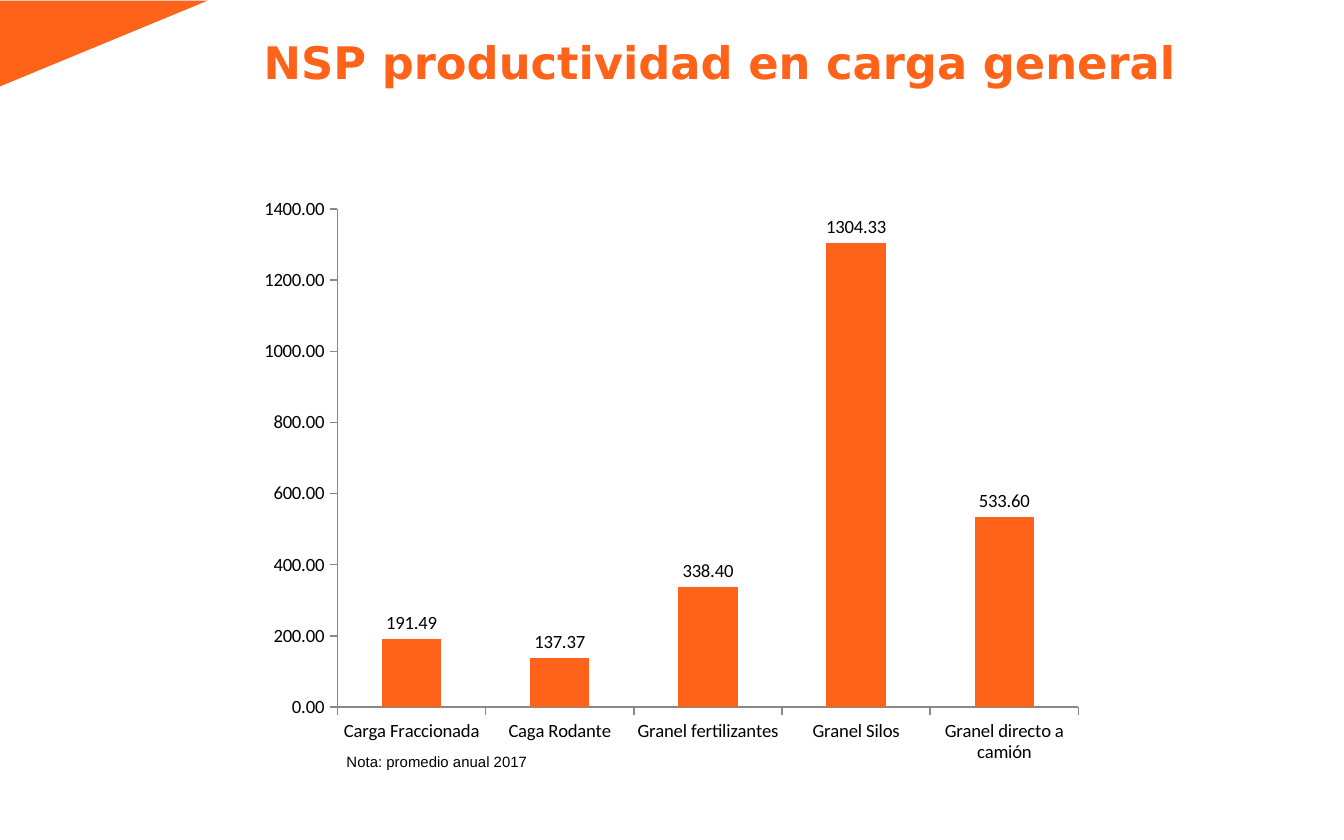
from pptx import Presentation
from pptx.chart.data import CategoryChartData
from pptx.dml.color import RGBColor
from pptx.enum.chart import XL_CHART_TYPE as CT, XL_LABEL_POSITION as LP, XL_TICK_MARK as TM
from pptx.enum.shapes import MSO_SHAPE as MS
from pptx.enum.text import MSO_ANCHOR as MA, PP_ALIGN as AL
from pptx.util import Inches, Pt

TITLE = "NSP productividad en carga general"
NOTE = "Nota: promedio anual 2017"
PRODUCTIVITY = [
    ("Carga Fraccionada", 191.49),
    ("Caga Rodante", 137.37),
    ("Granel fertilizantes", 338.4),
    ("Granel Silos", 1304.33),
    ("Granel directo a camión", 533.6),
]
ORANGE, BLACK, GREY = "FF6319", "000000", "888888"


def color(fmt, value):
    fmt.rgb = RGBColor.from_string(value)


def fill(fmt, value):
    fmt.solid()
    color(fmt.fore_color, value)


def style(font, size, name, value, bold=False):
    font.size, font.name, font.bold = Pt(size), name, bold
    color(font.color, value)


def place(sp, left, top, width, height):
    sp.left, sp.top = Inches(left), Inches(top)
    sp.width, sp.height = Inches(width), Inches(height)


def write(sp, text, size, name, value, bold=False, align=AL.LEFT, anchor=MA.TOP):
    tf = sp.text_frame
    tf.word_wrap = True
    tf.vertical_anchor = anchor
    p = tf.paragraphs[0]
    p.alignment = align
    r = p.add_run()
    r.text = text
    style(r.font, size, name, value, bold)


def add_chart(s):
    data = CategoryChartData(number_format="0.00")
    data.categories = [name for name, _ in PRODUCTIVITY]
    data.add_series("Series 1", [value for _, value in PRODUCTIVITY])
    box = [Inches(v) for v in (1.84, 1.39, 6.31, 4.37)]
    chart = s.shapes.add_chart(CT.COLUMN_CLUSTERED, *box, data).chart
    chart.has_legend = chart.has_title = False
    style(chart.font, 10, "Calibri", BLACK)

    for axis in (chart.category_axis, chart.value_axis):
        axis.has_major_gridlines = False
        axis.major_tick_mark, axis.minor_tick_mark = TM.OUTSIDE, TM.NONE
        fill(axis.format.line.fill, GREY)
        axis.format.line.width = Pt(0.75)
        style(axis.tick_labels.font, 10, "Calibri", BLACK)
    axis = chart.value_axis
    axis.minimum_scale, axis.maximum_scale, axis.major_unit = 0, 1400, 200
    axis.tick_labels.number_format = "0.00"
    axis.tick_labels.number_format_is_linked = False

    plot = chart.plots[0]
    plot.gap_width = 150
    plot.vary_by_categories = False
    fill(plot.series[0].format.fill, ORANGE)
    plot.has_data_labels = True
    labels = plot.data_labels
    labels.show_value = True
    labels.position = LP.OUTSIDE_END
    labels.number_format = "0.00"
    labels.number_format_is_linked = False
    style(labels.font, 10, "Calibri", BLACK)


def main():
    prs = Presentation()
    prs.slide_width, prs.slide_height = Inches(10), Inches(6.25)
    s = prs.slides.add_slide(prs.slide_layouts[5])

    corner = s.shapes.add_shape(MS.RIGHT_TRIANGLE, 0, 0, 0, 0)
    place(corner, 0.45, -0.45, 0.64, 1.55)
    corner.rotation = 90
    corner.shadow.inherit = False
    fill(corner.fill, ORANGE)
    corner.line.fill.background()

    title = s.shapes.title
    place(title, 1.3, 0.21, 8.11, 0.5)
    write(title, TITLE, 24, "DejaVu Sans", ORANGE, bold=True, align=AL.CENTER, anchor=MA.MIDDLE)

    add_chart(s)

    note = s.shapes.add_textbox(0, 0, 0, 0)
    place(note, 2.48, 5.55, 1.73, 0.24)
    write(note, NOTE, 8, "Arial", BLACK)

    prs.save("out.pptx")


if __name__ == "__main__":
    main()
